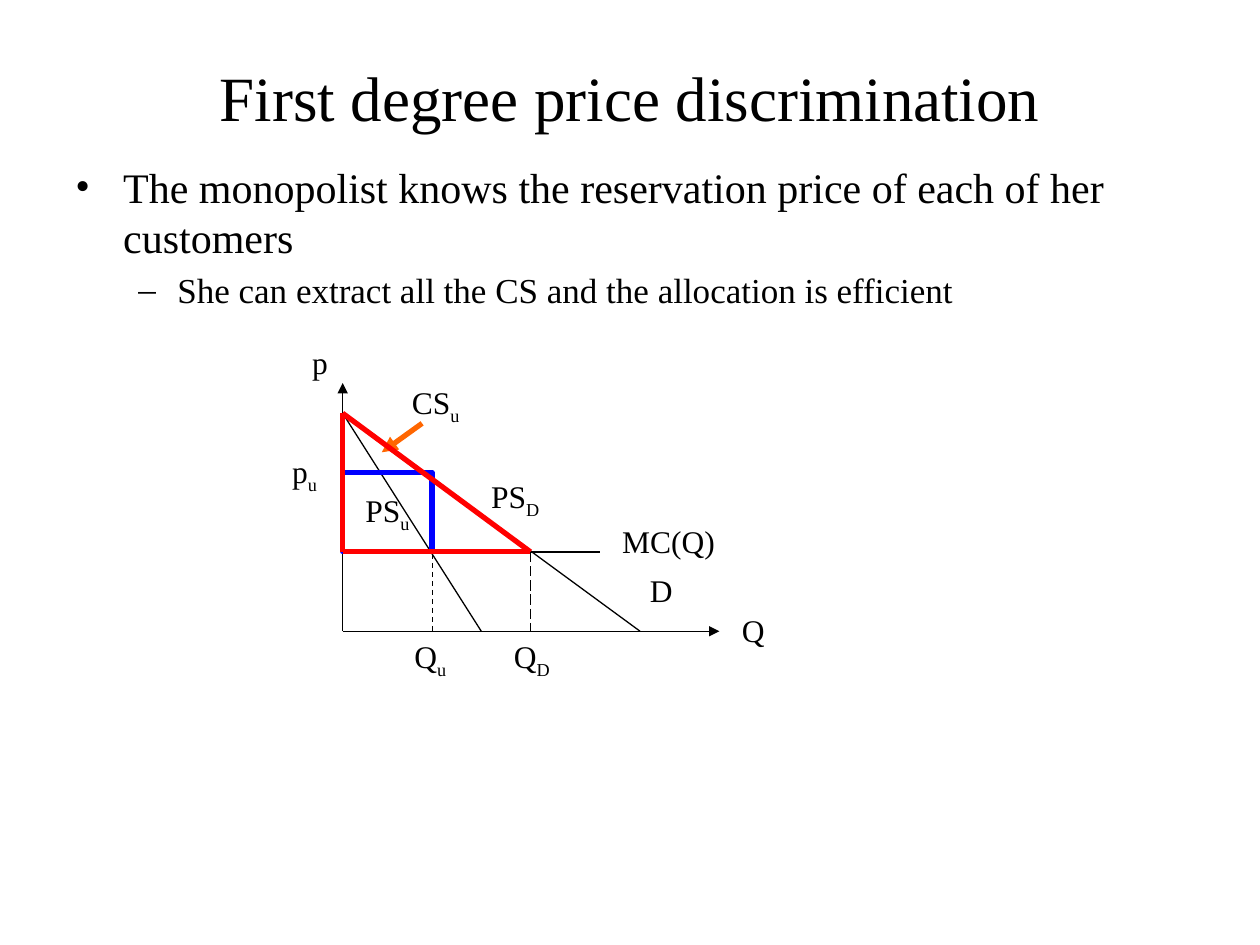
from lxml import etree
from pptx import Presentation
from pptx.dml.color import RGBColor
from pptx.enum import dml, shapes, text
from pptx.oxml import ns
from pptx.util import Inches, Pt

FONT = "Times New Roman"
BLACK, RED, BLUE, ORANGE = "000000", "FF0000", "0000FF", "FF6600"

# Positions on the diagram, in inches
ORIGIN_X, ORIGIN_Y = 2.72, 5.01
TOP_PRICE, UNIFORM_PRICE, COST = 3.28, 3.75, 4.38
UNIFORM_Q, DISCRIM_Q = 3.43, 4.21


def color(value):
    return RGBColor.from_string(value)


def add_child(parent, tag, **attributes):
    return etree.SubElement(parent, ns.qn(tag), attributes)


def write(para, content, size=18, sub=""):
    """Write a run, followed by an optional subscript."""
    for part, baseline in ((content, None), (sub, "-25000")):
        if not part:
            continue
        span = para.add_run()
        span.text = part
        span.font.name = FONT
        span.font.size = Pt(size)
        span.font.color.rgb = color(BLACK)
        if baseline:
            span.font._element.set("baseline", baseline)


def add_box(page, left, top, width, height, wrap=True):
    box = page.shapes.add_textbox(*map(Inches, (left, top, width, height)))
    box.text_frame.word_wrap = wrap
    return box


def add_label(page, content, left, top, width, sub=""):
    box = add_box(page, left, top, width, 0.4, wrap=False)
    write(box.text_frame.paragraphs[0], content, sub=sub)


def add_bullet(para, content, size, mark, margin, hanging):
    write(para, content, size)
    para.space_before = Pt(size * 0.2)
    properties = para._p.get_or_add_pPr()
    properties.set("marL", str(Inches(margin)))
    properties.set("indent", str(-Inches(hanging)))
    add_child(properties, "a:buFont", typeface=FONT)
    add_child(properties, "a:buChar", char=mark)


def add_line(page, start, end, stroke=BLACK, width=0.75, dash=None, arrow=False):
    line = page.shapes.add_connector(
        shapes.MSO_CONNECTOR.STRAIGHT, *map(Inches, (*start, *end)))
    line.line.color.rgb = color(stroke)
    line.line.width = Pt(width)
    if dash:
        line.line.dash_style = dash
    if arrow:
        add_child(line.line._get_or_add_ln(), "a:tailEnd", type="triangle")
    add_child(line._element.spPr, "a:effectLst")


def add_surplus_square(page):
    box = page.shapes.add_shape(
        shapes.MSO_SHAPE.RECTANGLE,
        *map(Inches, (ORIGIN_X, UNIFORM_PRICE,
                      UNIFORM_Q - ORIGIN_X, COST - UNIFORM_PRICE)))
    box.shadow.inherit = False
    box.fill.background()
    box.line.color.rgb = color(BLUE)
    box.line.width = Pt(3)
    frame = box.text_frame
    frame.word_wrap = False
    frame.vertical_anchor = text.MSO_ANCHOR.MIDDLE
    frame.paragraphs[0].alignment = text.PP_ALIGN.CENTER
    write(frame.paragraphs[0], "PS", sub="u")


def add_wording(page):
    title = add_box(page, 0.5, 0.3, 9, 0.93).text_frame
    title.vertical_anchor = text.MSO_ANCHOR.MIDDLE
    title.paragraphs[0].alignment = text.PP_ALIGN.CENTER
    write(title.paragraphs[0], "First degree price discrimination", 36)

    body = add_box(page, 0.5, 1.23, 9, 5.47).text_frame
    add_bullet(body.paragraphs[0],
               "The monopolist knows the reservation price of each of her customers",
               24, "•", 0.38, 0.38)
    detail = body.add_paragraph()
    detail.level = 1
    add_bullet(detail, "She can extract all the CS and the allocation is efficient",
               20, "–", 0.81, 0.31)


def add_diagram(page):
    origin = (ORIGIN_X, ORIGIN_Y)
    choke = (ORIGIN_X, TOP_PRICE)
    cost_start = (ORIGIN_X, COST)
    uniform_start = (ORIGIN_X, UNIFORM_PRICE)
    uniform_point = (UNIFORM_Q, UNIFORM_PRICE)
    efficient_point = (DISCRIM_Q, COST)

    # Axes, demand, marginal revenue and marginal cost
    add_line(page, origin, (ORIGIN_X, 3.04), arrow=True)
    add_line(page, origin, (5.71, ORIGIN_Y), arrow=True)
    add_line(page, choke, (5.08, ORIGIN_Y))
    add_line(page, cost_start, (4.76, COST))
    add_line(page, choke, (3.82, ORIGIN_Y))

    # Uniform price: guides, consumer surplus and producer surplus
    dash = dml.MSO_LINE.DASH
    add_line(page, uniform_point, (UNIFORM_Q, ORIGIN_Y), dash=dash)
    add_line(page, uniform_point, uniform_start, dash=dash)
    add_line(page, choke, uniform_start, ORANGE, 3)
    add_line(page, uniform_start, uniform_point, ORANGE, 3)
    add_line(page, choke, (3.35, UNIFORM_PRICE), ORANGE, 2.25)
    add_surplus_square(page)
    add_line(page, (3.35, 3.36), (3.03, 3.59), ORANGE, 3, arrow=True)

    # Surplus triangle under price discrimination
    add_line(page, choke, cost_start, RED, 3)
    add_line(page, cost_start, efficient_point, RED, 3)
    add_line(page, choke, efficient_point, RED, 3)
    add_line(page, efficient_point, (DISCRIM_Q, ORIGIN_Y),
             dash=dml.MSO_LINE.LONG_DASH)

    # Labels: wording, left, top, width, subscript
    for label in (
        ("p", 2.38, 2.67, 0.33),
        ("Q", 5.79, 4.8, 0.38),
        ("D", 5.06, 4.48, 0.38),
        ("MC(Q)", 4.84, 4.09, 0.94),
        ("p", 2.22, 3.54, 0.41, "u"),
        ("Q", 3.19, ORIGIN_Y, 0.47, "u"),
        ("CS", 3.17, 2.99, 0.59, "u"),
        ("PS", 3.8, 3.74, 0.6, "D"),
        ("Q", 3.98, ORIGIN_Y, 0.63, "D"),
    ):
        add_label(page, *label)


def main():
    deck = Presentation()
    deck.slide_width, deck.slide_height = Inches(10), Inches(7.5)
    page = deck.slides.add_slide(deck.slide_layouts[6])
    add_wording(page)
    add_diagram(page)
    deck.save("out.pptx")


if __name__ == "__main__":
    main()
